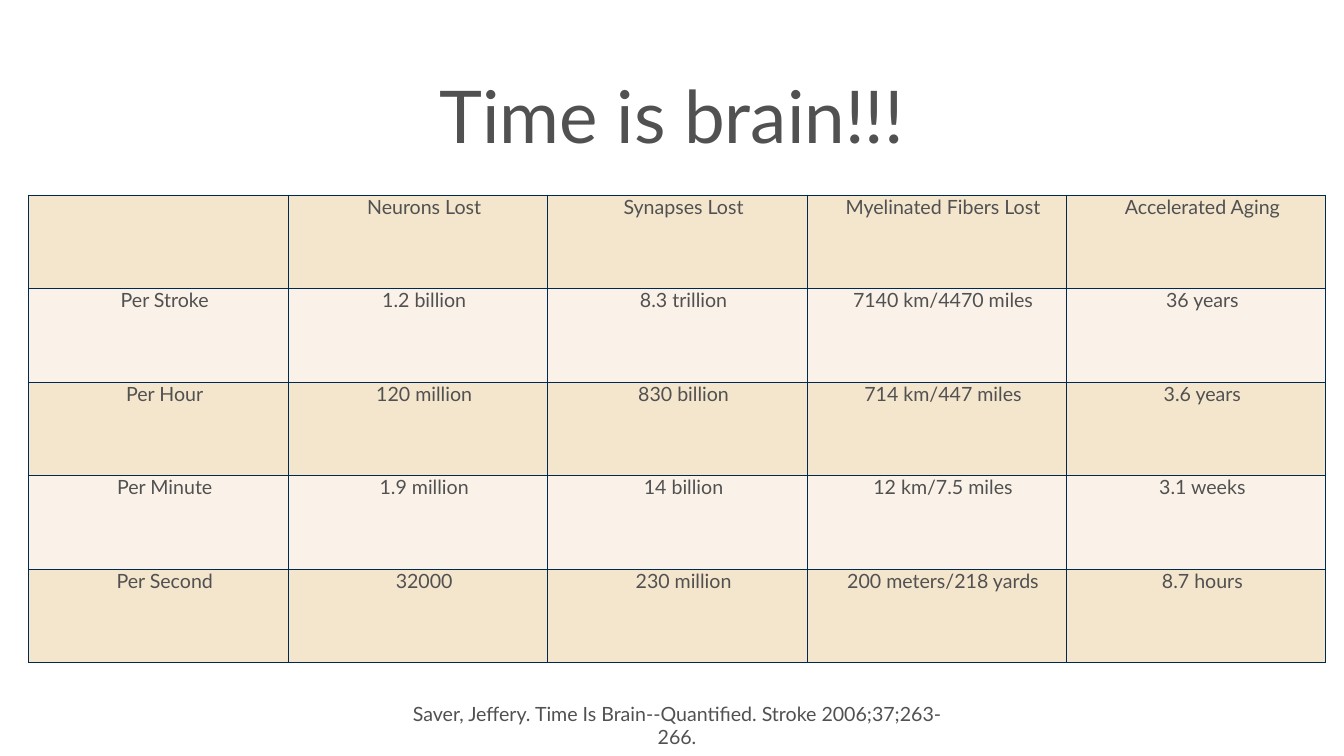
from lxml.etree import SubElement
from pptx import Presentation
from pptx.dml.color import RGBColor
from pptx.enum.text import MSO_ANCHOR, MSO_AUTO_SIZE, PP_ALIGN
from pptx.oxml.ns import qn
from pptx.util import Inches, Pt

TEXT = RGBColor(0x51, 0x51, 0x51)
SAND = RGBColor(0xF4, 0xE5, 0xCD)
CREAM = RGBColor(0xFA, 0xF2, 0xE8)
BORDER = RGBColor(0x00, 0x29, 0x51)
MARGIN = Inches(0.08)

LOSSES = [
    ["", "Neurons Lost", "Synapses Lost", "Myelinated Fibers Lost", "Accelerated Aging"],
    ["Per Stroke", "1.2 billion", "8.3 trillion", "7140 km/4470 miles", "36 years"],
    ["Per Hour", "120 million", "830 billion", "714 km/447 miles", "3.6 years"],
    ["Per Minute", "1.9 million", "14 billion", "12 km/7.5 miles", "3.1 weeks"],
    ["Per Second", "32000", "230 million", "200 meters/218 yards", "8.7 hours"],
]


def write_centered(frame, text, size, margin):
    frame.margin_left = frame.margin_right = margin
    frame.margin_top = frame.margin_bottom = margin
    frame.word_wrap = True
    frame.auto_size = MSO_AUTO_SIZE.NONE
    frame.vertical_anchor = MSO_ANCHOR.MIDDLE
    paragraph = frame.paragraphs[0]
    paragraph.text = text
    paragraph.alignment = PP_ALIGN.CENTER
    paragraph.font.name = "Lato"
    paragraph.font.size = Pt(size)
    paragraph.font.color.rgb = TEXT


def add_borders(cell):
    properties = cell._tc.get_or_add_tcPr()
    for side in ("a:lnL", "a:lnR", "a:lnT", "a:lnB"):
        line = SubElement(properties, qn(side), w=str(Pt(1)))
        fill = SubElement(line, qn("a:solidFill"))
        SubElement(fill, qn("a:srgbClr"), val=str(BORDER))


deck = Presentation()
deck.slide_width = Inches(26.67)
deck.slide_height = Inches(15)
page = deck.slides.add_slide(deck.slide_layouts[5])

title = page.shapes.title
title.left, title.top = Inches(4.54), Inches(0.8)
title.width, title.height = Inches(17.58), Inches(2.93)
write_centered(title.text_frame, "Time is brain!!!", 104, MARGIN)

table = page.shapes.add_table(
    len(LOSSES), len(LOSSES[0]), Inches(0.57), Inches(3.87), Inches(25.74), Inches(9.28)
).table
for row_index, values in enumerate(LOSSES):
    for column_index, value in enumerate(values):
        cell = table.cell(row_index, column_index)
        cell.margin_left = cell.margin_right = 0
        cell.margin_top = cell.margin_bottom = 0
        add_borders(cell)
        cell.fill.solid()
        cell.fill.fore_color.rgb = CREAM if row_index % 2 else SAND
        paragraph = cell.text_frame.paragraphs[0]
        paragraph.text = value
        paragraph.alignment = PP_ALIGN.CENTER
        paragraph._p.get_or_add_pPr().set("indent", str(Inches(0.25)))
        paragraph.font.name = "Lato"
        paragraph.font.size = Pt(28)
        paragraph.font.bold = False
        paragraph.font.color.rgb = TEXT

citation = page.shapes.add_textbox(Inches(7.95), Inches(14.08), Inches(10.97), Inches(0.62))
write_centered(
    citation.text_frame,
    "Saver, Jeffery. Time Is Brain--Quantified. Stroke 2006;37;263-266.",
    28,
    MARGIN,
)

deck.save("out.pptx")
